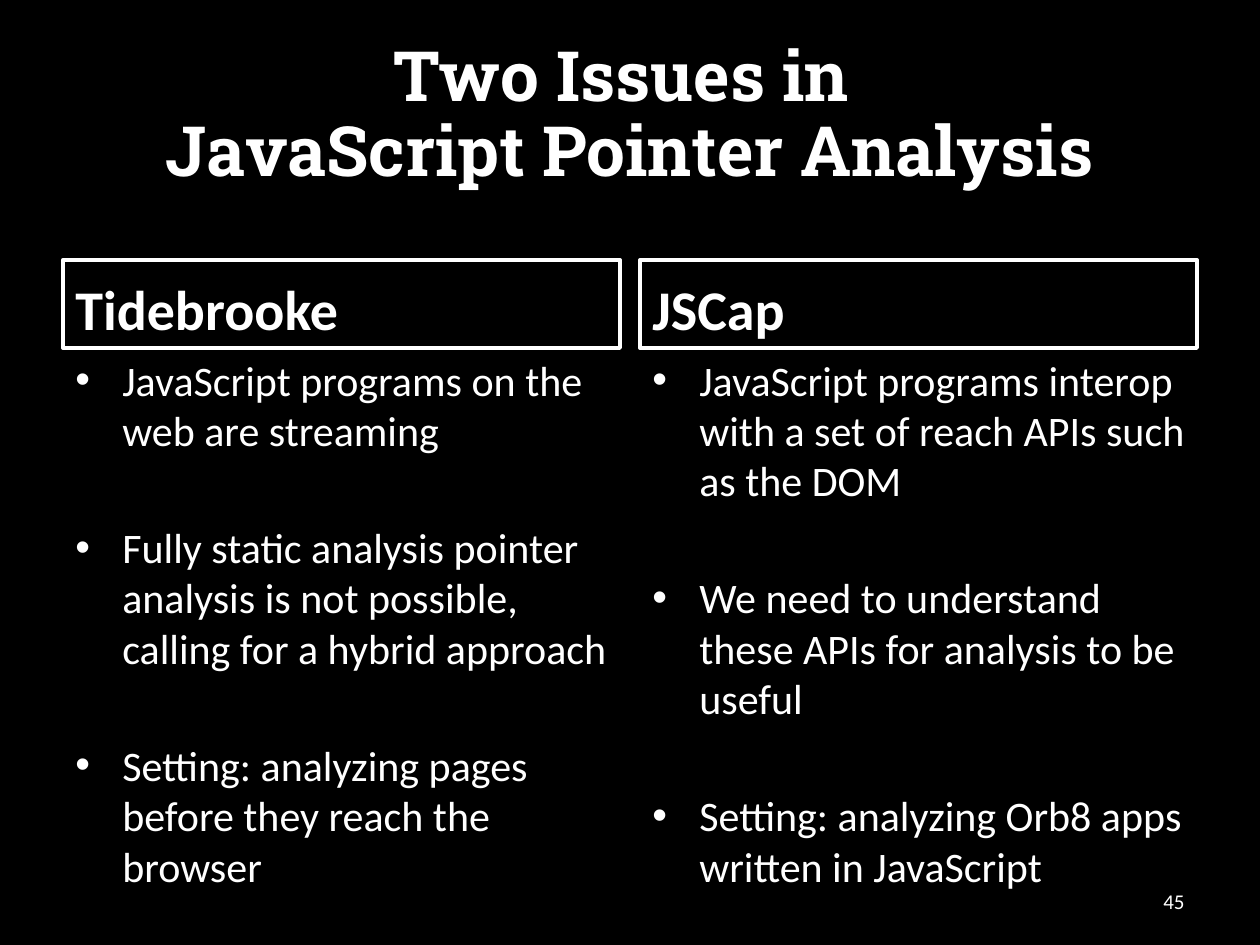
from pptx import Presentation
from pptx.dml.color import RGBColor
from pptx.enum.shapes import MSO_SHAPE
from pptx.enum.text import MSO_ANCHOR, PP_ALIGN
from pptx.util import Emu, Pt
from lxml.etree import SubElement
from pptx.oxml.ns import qn

PX = 914400 / 126
BLACK = RGBColor(0, 0, 0)
WHITE = RGBColor(255, 255, 255)
TITLE = {"name": "Roboto Slab", "size": Pt(39.6), "bold": True}
HEADING = {"name": "Calibri", "size": Pt(32), "bold": True}
BODY = {"name": "Calibri", "size": Pt(24)}
NUMBER = {"name": "Calibri", "size": Pt(12)}


def px(*lengths):
    return [Emu(round(length * PX)) for length in lengths]


def write(box, texts, style, anchor, align=PP_ALIGN.LEFT):
    frame = box.text_frame
    frame.word_wrap = True
    frame.vertical_anchor = anchor
    for index, text in enumerate(texts):
        para = frame.paragraphs[0] if index == 0 else frame.add_paragraph()
        para.text = text
        para.alignment = align
        for span in para.runs:
            span.font.color.rgb = WHITE
            for name, value in style.items():
                setattr(span.font, name, value)
    return frame


deck = Presentation()
deck.slide_width, deck.slide_height = px(1260, 945)
page = deck.slides.add_slide(deck.slide_layouts[6])
page.background.fill.solid()
page.background.fill.fore_color.rgb = BLACK

title = page.shapes.add_textbox(*px(63, 38, 1134, 157))
frame = write(title, ["Two Issues in \vJavaScript Pointer Analysis"],
              TITLE, MSO_ANCHOR.MIDDLE, PP_ALIGN.CENTER)
frame.paragraphs[0].line_spacing = 0.9

columns = [
    ("Tidebrooke", [
        "JavaScript programs on the web are streaming",
        "Fully static analysis pointer analysis is not possible, calling for a hybrid approach",
        "Setting: analyzing pages before they reach the browser",
    ]),
    ("JSCap", [
        "JavaScript programs interop with a set of reach APIs such as the DOM",
        "We need to understand these APIs for analysis to be useful",
        "Setting: analyzing Orb8 apps written in JavaScript",
    ]),
]
for column, (heading, points) in enumerate(columns):
    left = 63 + 577 * column
    header = page.shapes.add_shape(MSO_SHAPE.RECTANGLE, *px(left, 260, 557, 88))
    header.shadow.inherit = False
    header.fill.background()
    header.line.color.rgb = WHITE
    header.line.width = Pt(2.25)
    write(header, [heading], HEADING, MSO_ANCHOR.BOTTOM)

    body = page.shapes.add_textbox(*px(left, 348, 557, 544))
    frame = write(body, points, BODY, MSO_ANCHOR.TOP)
    frame.margin_right = px(8)[0]
    indent = px(47)[0]
    for index, para in enumerate(frame.paragraphs):
        para.space_before = Pt(38 if index else 0)
        properties = para._p.get_or_add_pPr()
        properties.set("marL", str(indent))
        properties.set("indent", str(-indent))
        SubElement(properties, qn("a:buFont"), typeface="Arial")
        SubElement(properties, qn("a:buChar"), char="•")

number = page.shapes.add_textbox(*px(903, 876, 294, 50))
write(number, ["45"], NUMBER, MSO_ANCHOR.MIDDLE, PP_ALIGN.RIGHT)

deck.save("out.pptx")
